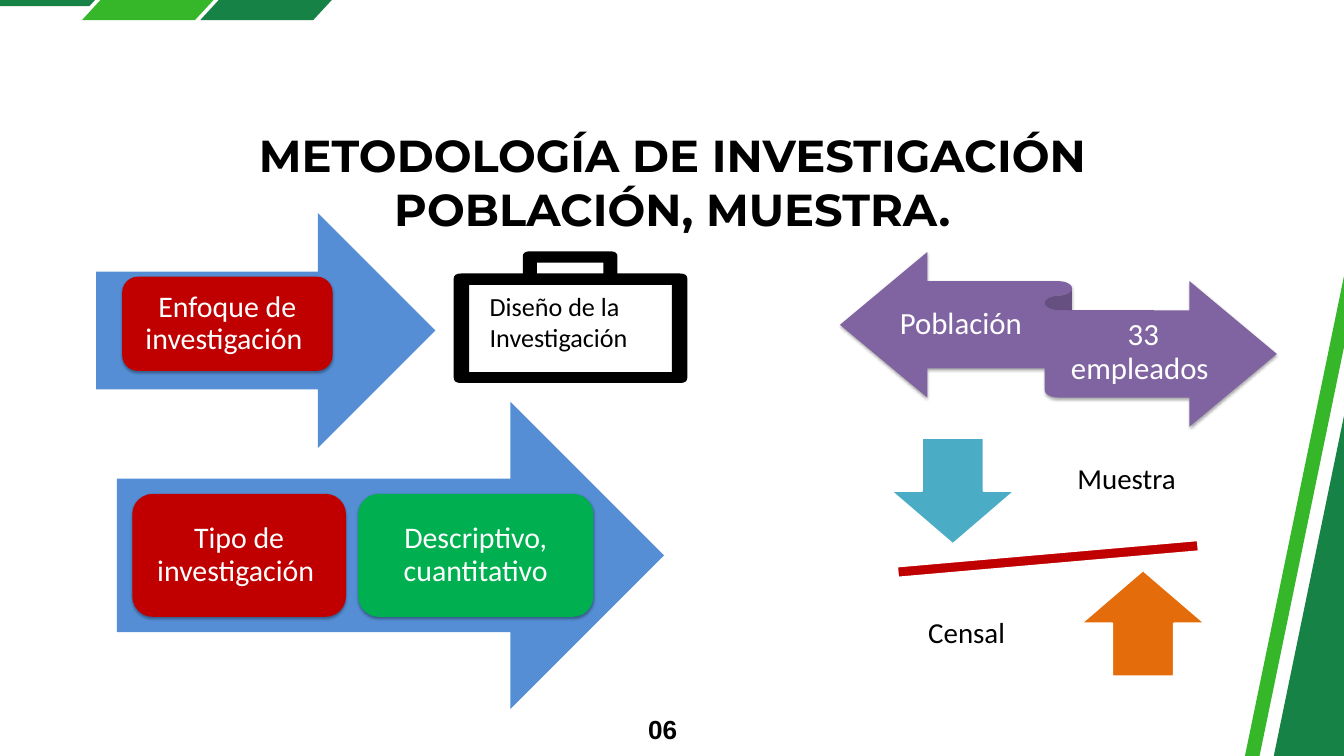
from math import copysign

from lxml import etree
from pptx import Presentation
from pptx.dml.color import RGBColor
from pptx.enum.shapes import MSO_SHAPE
from pptx.enum.text import MSO_ANCHOR, MSO_AUTO_SIZE, PP_ALIGN
from pptx.oxml.ns import qn
from pptx.util import Cm, Pt

RIBBON = MSO_SHAPE.LEFT_RIGHT_RIBBON
MINUS = MSO_SHAPE.MATH_MINUS
RIGHT, DOWN, UP = MSO_SHAPE.RIGHT_ARROW, MSO_SHAPE.DOWN_ARROW, MSO_SHAPE.UP_ARROW
CARD = MSO_SHAPE.ROUNDED_RECTANGLE
LEFT_ALIGN, CENTER, RIGHT_ALIGN = PP_ALIGN.LEFT, PP_ALIGN.CENTER, PP_ALIGN.RIGHT
TOP, MIDDLE = MSO_ANCHOR.TOP, MSO_ANCHOR.MIDDLE

THEME = {
    "black": "000000", "white": "FFFFFF", "forest": "168246", "leaf": "35B729",
    "purple": "8064A2", "red": "C00000", "teal": "4BACC6", "orange": "E46C0A",
    "blue": "558ED5", "green": "00B050",
}
STYLES = {
    "title": dict(font=dict(name="Montserrat", size=Pt(48), bold=True), color="black",
                  align=CENTER, anchor=TOP, spacing=1.0, insets=(0, 0, 0, 0)),
    "page": dict(font=dict(name="Arial", size=Pt(28), bold=True), color="black",
                 align=RIGHT_ALIGN, anchor=TOP, spacing=Pt(39.2), insets=(0, 0, 0, 0)),
    "card": dict(font=dict(name="Calibri", size=Pt(32)), color="white",
                 align=CENTER, anchor=MIDDLE, spacing=0.9, insets=(0.33, 0.33, 0.33, 0.33)),
    "ribbon": dict(font=dict(name="Calibri", size=Pt(33)), color="white",
                   align=CENTER, anchor=MIDDLE, spacing=0.9, insets=(0, 0.33, 0, 0.36)),
    "balance": dict(font=dict(name="Calibri", size=Pt(31)), color="black",
                    align=CENTER, anchor=MIDDLE, spacing=0.9, insets=(0.61, 0.61, 0.61, 0.61)),
    "design": dict(font=dict(name="Calibri", size=Pt(28)), color="black",
                   align=LEFT_ALIGN, anchor=TOP, spacing=1.0, insets=(0.25, 0.13, 0.25, 0.13)),
}

TITLE = ("METODOLOGÍA DE INVESTIGACIÓN POBLACIÓN, MUESTRA.", (6.15, 4.83, 38.53, 4.11))

TOP_STRIPE = [(6.2, -2.62), (10.49, -2.62), (7.37, 0.76), (3.1, 0.76)]
STRIPE_STEP = 4.47
DECORATION = [
    ("forest", [(-4.55, -2.11), (5.51, -2.11), (3.38, 0.23), (-6.68, 0.23)]),
    ("leaf", TOP_STRIPE),
    ("forest", [(x + STRIPE_STEP, y) for x, y in TOP_STRIPE]),
    ("forest", [(46.05, 38.74), (54.48, -2.11), (66.07, 0.3), (57.63, 41.12)]),
    ("leaf", [(44.96, 38.74), (53.39, -2.11), (53.92, -1.98), (45.49, 38.84)]),
]

DIAGRAMS = [
    dict(kind=RIBBON, box=(31.75, 9.53, 16.51, 6.6), fill="purple", shadow=True),
    dict(kind=MINUS, box=(31.85, 20.24, 15.52, 1.78), fill="red", outline=True, rotation=-5),
    dict(kind=DOWN, box=(33.68, 16.56, 4.67, 4.01), fill="teal", outline=True),
    dict(kind=UP, box=(40.87, 21.56, 4.67, 4.01), fill="orange", outline=True),
    dict(kind=RIGHT, box=(4.42, 15.19, 20.68, 11.61), fill="blue"),
    dict(kind=CARD, box=(5, 18.67, 8.08, 4.65), fill="red", shadow=True,
         text="Tipo de investigación "),
    dict(kind=CARD, box=(13.54, 18.67, 8.89, 4.65), fill="green", shadow=True,
         text="Descriptivo, cuantitativo"),
    dict(kind=RIGHT, box=(3.63, 8.05, 12.83, 8.89), fill="blue"),
    dict(kind=CARD, box=(4.62, 10.46, 7.95, 3.56), fill="red", shadow=True,
         text="Enfoque de investigación "),
]

LABELS = [
    ("page", "06", (24.18, 26.77, 1.42, 1.27)),
    ("ribbon", "Población ", (33.73, 10.67, 5.44, 3.23)),
    ("ribbon", "33 empleados ", (40, 11.73, 6.43, 3.23)),
    ("balance", "Muestra ", (40.08, 16.05, 5, 4.22)),
    ("balance", "Censal ", (34.16, 21.87, 5, 4.22)),
    ("design", "Diseño de la Investigación", (18.26, 10.85, 6.63, 2.64)),
]

CASE_RADIUS = (0.28, 0.2)
CASE_OUTLINE = [
    (17.15, 10.34, True), (19.76, 10.34, False), (19.76, 9.5, True), (23.34, 9.5, True),
    (23.34, 10.34, False), (25.98, 10.34, True), (25.98, 14.48, True), (17.15, 14.48, True),
]
CASE_HOLES = [(20.29, 9.93, 22.81, 10.34), (17.73, 10.77, 25.4, 14.07)]


def color(key):
    return RGBColor.from_string(THEME[key])


def lengths(values):
    return [Cm(value) for value in values]


def write(frame, text, style_key):
    style = STYLES[style_key]
    left, top, right, bottom = lengths(style["insets"])
    frame_format = dict(word_wrap=True, auto_size=MSO_AUTO_SIZE.NONE,
                        vertical_anchor=style["anchor"], margin_left=left,
                        margin_top=top, margin_right=right, margin_bottom=bottom)
    for attribute, value in frame_format.items():
        setattr(frame, attribute, value)
    frame.text = text
    paragraph = frame.paragraphs[0]
    paragraph.alignment = style["align"]
    paragraph.line_spacing = style["spacing"]
    font = paragraph.runs[0].font
    for attribute, value in style["font"].items():
        setattr(font, attribute, value)
    font.color.rgb = color(style["color"])


def paint(shape, fill, outline=False, shadow=False):
    shape.shadow.inherit = False
    shape.fill.solid()
    shape.fill.fore_color.rgb = color(fill)
    if outline:
        shape.line.color.rgb = color("white")
        shape.line.width = Pt(2)
    else:
        shape.line.fill.background()
    if shadow:
        effects = shape._element.spPr.find(qn("a:effectLst"))
        outer = etree.SubElement(effects, qn("a:outerShdw"), blurRad=str(Pt(3.1)),
                                 dist=str(Pt(1.8)), dir="5400000", rotWithShape="0")
        tint = etree.SubElement(outer, qn("a:srgbClr"), val=THEME["black"])
        etree.SubElement(tint, qn("a:alpha"), val="35000")


def draw_outline(slide, contours, fill):
    first, *others = [[lengths(point) for point in contour] for contour in contours]
    builder = slide.shapes.build_freeform(*first[0])
    builder.add_line_segments(first[1:], close=True)
    for contour in others:
        builder.move_to(*contour[0])
        builder.add_line_segments(contour[1:], close=True)
    paint(builder.convert_to_shape(), fill)


def toward(corner, neighbour):
    return [start + (copysign(radius, end - start) if end != start else 0)
            for start, end, radius in zip(corner, neighbour, CASE_RADIUS)]


def round_corners(vertices):
    points = []
    for i, (x, y, rounded) in enumerate(vertices):
        if not rounded:
            points.append((x, y))
            continue
        before = toward((x, y), vertices[i - 1][:2])
        after = toward((x, y), vertices[(i + 1) % len(vertices)][:2])
        for t in (0, 0.25, 0.5, 0.75, 1):
            points.append([(1 - t) ** 2 * a + 2 * t * (1 - t) * b + t ** 2 * c
                           for a, b, c in zip(before, (x, y), after)])
    return points


def main():
    deck = Presentation()
    deck.slide_width, deck.slide_height = Cm(50.8), Cm(28.58)
    slide = deck.slides.add_slide(deck.slide_layouts[5])

    title = slide.shapes.title
    heading, box = TITLE
    for attribute, value in zip(("left", "top", "width", "height"), lengths(box)):
        setattr(title, attribute, value)
    write(title.text_frame, heading, "title")

    for fill, outline in DECORATION:
        draw_outline(slide, [outline], fill)

    for part in DIAGRAMS:
        shape = slide.shapes.add_shape(part["kind"], *lengths(part["box"]))
        paint(shape, part["fill"], part.get("outline", False), part.get("shadow", False))
        shape.rotation = part.get("rotation", 0)
        if "text" in part:
            write(shape.text_frame, part["text"], "card")

    holes = [[(l, t), (r, t), (r, b), (l, b)] for l, t, r, b in CASE_HOLES]
    draw_outline(slide, [round_corners(CASE_OUTLINE), *holes], "black")

    for style_key, text, box in LABELS:
        write(slide.shapes.add_textbox(*lengths(box)).text_frame, text, style_key)

    deck.save("out.pptx")


if __name__ == "__main__":
    main()
